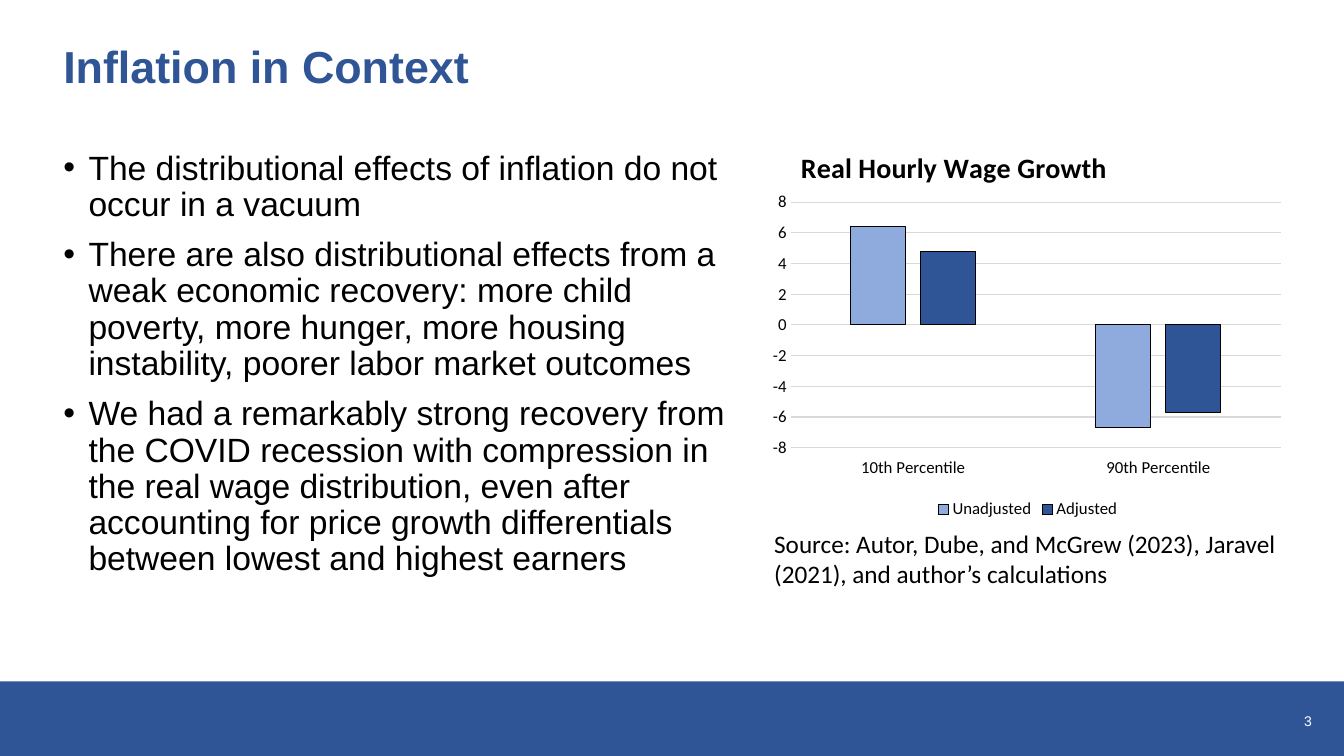
"""Build the slide on inflation and real hourly wage growth."""
from dataclasses import dataclass

from lxml import etree
from pptx import Presentation
from pptx import util as u
from pptx.chart import data as chart_data
from pptx.dml import color
from pptx.enum import chart as chart_enum, shapes, text
from pptx.oxml import ns

COLORS = {
    "navy": "2F5597",
    "sky": "8FAADC",
    "grid": "D9D9D9",
    "black": "000000",
    "white": "FFFFFF",
}


@dataclass(frozen=True)
class Box:
    left: float
    top: float
    width: float
    height: float

    def inches(self) -> tuple:
        return tuple(u.Inches(n) for n in (self.left, self.top, self.width, self.height))


@dataclass(frozen=True)
class WageSeries:
    name: str
    values: tuple
    color: str


BULLETS = [
    "The distributional effects of inflation do not occur in a vacuum",
    "There are also distributional effects from a weak economic recovery: more child "
    "poverty, more hunger, more housing instability, poorer labor market outcomes",
    "We had a remarkably strong recovery from the COVID recession with compression in "
    "the real wage distribution, even after accounting for price growth differentials "
    "between lowest and highest earners",
]
PERCENTILES = ["10th Percentile", "90th Percentile"]
WAGE_GROWTH = [
    WageSeries("Unadjusted", (6.4, -6.7), "sky"),
    WageSeries("Adjusted", (4.8, -5.7), "navy"),
]


def rgb(name: str) -> color.RGBColor:
    return color.RGBColor.from_string(COLORS[name])


def style_font(font, size: float, name: str, fill: str = "black", bold: bool = False) -> None:
    font.size, font.name, font.bold = u.Pt(size), name, bold
    font.color.rgb = rgb(fill)


def style_line(line, fill: str) -> None:
    line.color.rgb = rgb(fill)
    line.width = u.Pt(0.75)


def add_bullet(paragraph) -> None:
    properties = paragraph._p.get_or_add_pPr()
    properties.set("marL", str(u.Inches(0.25)))
    properties.set("indent", str(u.Inches(-0.25)))
    etree.SubElement(properties, ns.qn("a:buFont")).set("typeface", "Arial")
    etree.SubElement(properties, ns.qn("a:buChar")).set("char", "•")


def add_text(slide, box: Box, lines: list, *, size: float, font: str = "Arial",
             fill: str = "black", bold: bool = False, bullets: bool = False,
             spacing: float = 1.0, gap: float = 0,
             align=text.PP_ALIGN.LEFT, anchor=text.MSO_ANCHOR.TOP) -> None:
    frame = slide.shapes.add_textbox(*box.inches()).text_frame
    frame.word_wrap = True
    frame.vertical_anchor = anchor
    for index, line in enumerate(lines):
        paragraph = frame.add_paragraph() if index else frame.paragraphs[0]
        paragraph.alignment = align
        paragraph.line_spacing = spacing
        paragraph.space_before = u.Pt(gap if index else 0)
        if bullets:
            add_bullet(paragraph)
        run = paragraph.add_run()
        run.text = line
        style_font(run.font, size, font, fill, bold)


def make_layout(inner: bool, **fractions: float):
    layout = etree.Element(ns.qn("c:layout"))
    manual = etree.SubElement(layout, ns.qn("c:manualLayout"))
    settings = {"layoutTarget": "inner"} if inner else {}
    settings |= {"xMode": "edge", "yMode": "edge"} | fractions
    for tag, value in settings.items():
        etree.SubElement(manual, ns.qn(f"c:{tag}")).set("val", str(value))
    return layout


def set_layout(parent, position: int, layout) -> None:
    for existing in parent.findall(ns.qn("c:layout")):
        parent.remove(existing)
    parent.insert(position, layout)


def add_wage_chart(slide, box: Box) -> None:
    data = chart_data.CategoryChartData()
    data.categories = PERCENTILES
    for wage in WAGE_GROWTH:
        data.add_series(wage.name, wage.values)
    chart = slide.shapes.add_chart(
        chart_enum.XL_CHART_TYPE.COLUMN_CLUSTERED, *box.inches(), data).chart
    style_font(chart.font, 10, "Calibri")

    chart.has_title = True
    paragraph = chart.chart_title.text_frame.paragraphs[0]
    run = paragraph.add_run()
    run.text = "Real Hourly Wage Growth"
    style_font(run.font, 20, "Calibri", bold=True)
    chart.chart_title.include_in_layout = False
    set_layout(chart.chart_title._element, 1, make_layout(False, x=0.06, y=0.04))
    plot_area = chart._chartSpace.chart.plotArea
    set_layout(plot_area, 0, make_layout(True, x=0.05, y=0.19, w=0.93, h=0.62))

    chart.has_legend = True
    chart.legend.position = chart_enum.XL_LEGEND_POSITION.BOTTOM
    chart.legend.include_in_layout = False
    style_font(chart.legend.font, 12, "Calibri")

    plot = chart.plots[0]
    plot.gap_width, plot.overlap, plot.vary_by_categories = 219, -27, False
    for series, wage in zip(plot.series, WAGE_GROWTH):
        series.invert_if_negative = False
        series.format.fill.solid()
        series.format.fill.fore_color.rgb = rgb(wage.color)
        style_line(series.format.line, "black")

    for axis in (chart.category_axis, chart.value_axis):
        axis.major_tick_mark = axis.minor_tick_mark = chart_enum.XL_TICK_MARK.NONE
        style_font(axis.tick_labels.font, 12, "Calibri")
    chart.category_axis.tick_label_position = chart_enum.XL_TICK_LABEL_POSITION.LOW
    style_line(chart.category_axis.format.line, "grid")
    values = chart.value_axis
    values.minimum_scale, values.maximum_scale, values.major_unit = -8, 8, 2
    values.format.line.fill.background()
    style_line(values.major_gridlines.format.line, "grid")


def add_footer(slide) -> None:
    band = slide.shapes.add_shape(
        shapes.MSO_SHAPE.RECTANGLE, *Box(0, 6.76, 13.33, 0.74).inches())
    band.shadow.inherit = False
    band.fill.solid()
    band.fill.fore_color.rgb = rgb("navy")
    band.line.fill.background()
    add_text(slide, Box(10.11, 6.95, 3, 0.4), ["3"], size=10, fill="white",
             align=text.PP_ALIGN.RIGHT, anchor=text.MSO_ANCHOR.MIDDLE)


def main() -> None:
    presentation = Presentation()
    presentation.slide_width, presentation.slide_height = u.Inches(13.33), u.Inches(7.5)
    slide = presentation.slides.add_slide(presentation.slide_layouts[6])
    add_footer(slide)
    add_text(slide, Box(0.53, 0.4, 12.43, 0.86), ["Inflation in Context"],
             size=32, fill="navy", bold=True, spacing=0.9)
    add_text(slide, Box(0.53, 1.45, 6.94, 4.97), BULLETS,
             size=24, bullets=True, spacing=0.9, gap=10)
    add_text(slide, Box(7.58, 5.19, 5.39, 0.71),
             ["Source: Autor, Dube, and McGrew (2023), Jaravel (2021), "
              "and author’s calculations"], size=18, font="Calibri")
    add_wage_chart(slide, Box(7.58, 1.26, 5.23, 3.93))
    presentation.save("out.pptx")


if __name__ == "__main__":
    main()
